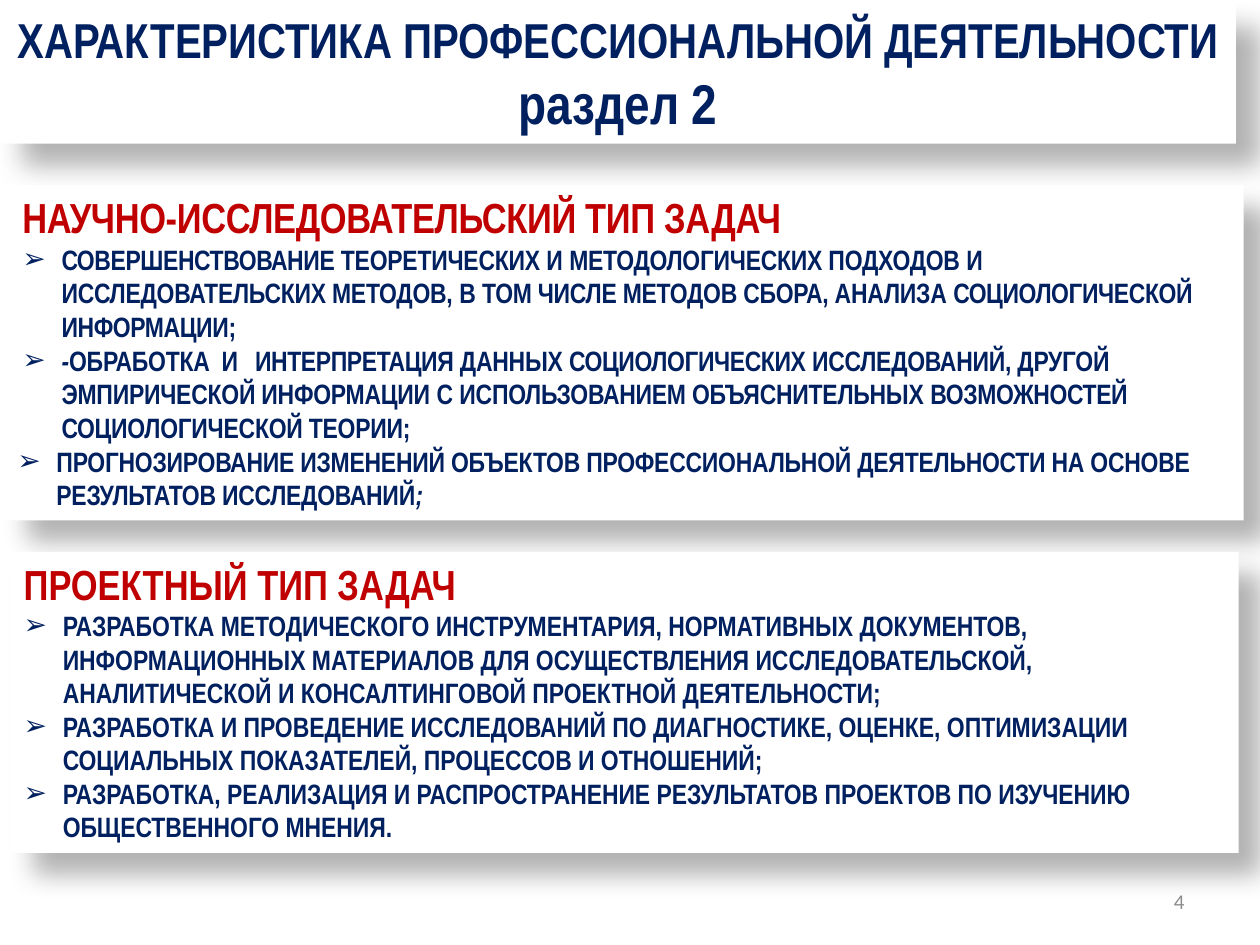
from dataclasses import dataclass

from lxml import etree
from pptx import Presentation
from pptx.dml.color import RGBColor
from pptx.enum.shapes import MSO_SHAPE
from pptx.enum.text import MSO_ANCHOR, MSO_AUTO_SIZE, PP_ALIGN
from pptx.oxml.ns import qn
from pptx.util import Inches, Pt

RECTANGLE = MSO_SHAPE.RECTANGLE
TOP, MIDDLE = MSO_ANCHOR.TOP, MSO_ANCHOR.MIDDLE
GROW = MSO_AUTO_SIZE.SHAPE_TO_FIT_TEXT
LEFT, CENTER, RIGHT = PP_ALIGN.LEFT, PP_ALIGN.CENTER, PP_ALIGN.RIGHT

NARROW = "Arial Narrow"
NAVY, RED, WHITE, BLACK, GRAY = "002060", "C00000", "FFFFFF", "000000", "8C8C8C"
BULLET = "➢"
BULLET_HANG = 0.31


@dataclass
class Run:
    text: str
    spacing: float = 0  # letter spacing in points
    italic: bool = False


@dataclass
class Line:
    runs: list[Run]
    size: int = 16
    color: str = NAVY
    align: PP_ALIGN = LEFT
    margin: float = 0
    before: float = 0
    bullet: bool = False
    font: str = NARROW
    bold: bool = True


@dataclass
class Panel:
    left: float
    top: float
    width: float
    height: float
    lines: list[Line]


def rgb(color: str) -> RGBColor:
    return RGBColor.from_string(color)


def heading(text: str, spacing: float = 0, **layout) -> Line:
    return Line([Run(text, spacing)], size=24, color=RED, **layout)


def item(*runs: Run, margin: float = BULLET_HANG, before: float = 0) -> Line:
    return Line(list(runs), margin=margin, before=before, bullet=True)


def add_shadow(shape) -> None:
    """Soft black shadow to the lower right."""
    shape.shadow.inherit = False
    effects = shape._element.spPr.find(qn("a:effectLst"))
    shadow = etree.SubElement(
        effects, qn("a:outerShdw"), blurRad=str(Pt(15)), dist=str(Pt(18)),
        dir=str(45 * 60000), algn="tl", rotWithShape="0")
    color = etree.SubElement(shadow, qn("a:srgbClr"), val=BLACK)
    etree.SubElement(color, qn("a:alpha"), val="30000")


def set_indent(paragraph, line: Line) -> None:
    properties = paragraph._p.get_or_add_pPr()
    properties.set("marL", str(Inches(line.margin)))
    if line.bullet:
        properties.set("indent", str(Inches(-BULLET_HANG)))
        etree.SubElement(properties, qn("a:buFont"), typeface="Arial")
        etree.SubElement(properties, qn("a:buChar"), char=BULLET)


def write_lines(text_frame, lines: list[Line]) -> None:
    for index, line in enumerate(lines):
        paragraph = text_frame.add_paragraph() if index else text_frame.paragraphs[0]
        paragraph.alignment = line.align
        paragraph.space_before = Pt(line.before)
        set_indent(paragraph, line)
        for part in line.runs:
            run = paragraph.add_run()
            run.text = part.text
            formats = {"name": line.font, "size": Pt(line.size),
                       "bold": line.bold, "italic": part.italic}
            for name, value in formats.items():
                setattr(run.font, name, value)
            run.font.color.rgb = rgb(line.color)
            if part.spacing:
                run._r.get_or_add_rPr().set("spc", str(round(part.spacing * 100)))


def add_panel(slide, panel: Panel) -> None:
    shape = slide.shapes.add_shape(
        RECTANGLE, Inches(panel.left), Inches(panel.top),
        Inches(panel.width), Inches(panel.height))
    shape.fill.solid()
    shape.fill.fore_color.rgb = rgb(WHITE)
    shape.line.fill.background()
    add_shadow(shape)
    formats = {"word_wrap": True, "vertical_anchor": TOP, "auto_size": GROW}
    for name, value in formats.items():
        setattr(shape.text_frame, name, value)
    write_lines(shape.text_frame, panel.lines)


def add_page_number(slide, number: str) -> None:
    box = slide.shapes.add_textbox(Inches(7.17), Inches(6.95), Inches(2.33), Inches(0.4))
    box.text_frame.word_wrap = True
    box.text_frame.vertical_anchor = MIDDLE
    write_lines(box.text_frame, [Line([Run(number)], size=12, color=GRAY, align=RIGHT,
                                      font="Calibri", bold=False)])


TITLE = Panel(0, 0.03, 9.81, 1.11, [
    Line([Run("ХАРАКТЕРИСТИКА ПРОФЕССИОНАЛЬНОЙ ДЕЯТЕЛЬНОСТИ ")], size=28, align=CENTER),
    Line([Run("раздел 2")], size=32, align=CENTER),
])

RESEARCH = Panel(0.04, 1.47, 9.83, 2.66, [
    heading("НАУЧНО-ИССЛЕДОВАТЕЛЬСКИЙ ТИП ЗАДАЧ", -0.2, margin=0.04, before=0.3),
    item(
        Run("СОВЕРШЕНСТВОВАНИЕ ", -0.2),
        Run("ТЕОРЕТИЧЕСКИХ ", -0.1),
        Run("И "),
        Run("МЕТОДОЛОГИЧЕСКИХ ПОДХОДОВ ", -0.1),
        Run("И "),
        Run("ИССЛЕДОВАТЕЛЬСКИХ МЕТОДОВ, ", -0.1),
        Run("В "),
        Run("ТОМ ЧИСЛЕ МЕТОДОВ СБОРА, АНАЛИЗА ", -0.1),
        Run("СОЦИОЛОГИЧЕСКОЙ ИНФОРМАЦИИ;", -0.2),
        margin=0.35, before=0.3),
    item(
        Run("-", -0.2, italic=True),
        Run("ОБРАБОТКА", -0.1),
        Run(" И ", 3),
        Run("ИНТЕРПРЕТАЦИЯ ", -0.2),
        Run("ДАННЫХ ", -0.1),
        Run("СОЦИОЛОГИЧЕСКИХ ", -0.2),
        Run("ИССЛЕДОВАНИЙ, ДРУГОЙ ЭМПИРИЧЕСКОЙ ИНФОРМАЦИИ ", -0.1),
        Run("С "),
        Run("ИСПОЛЬЗОВАНИЕМ ОБЪЯСНИТЕЛЬНЫХ ", -0.1),
        Run("ВОЗМОЖНОСТЕЙ ", -0.2),
        Run("СОЦИОЛОГИЧЕСКОЙ ТЕОРИИ;", -0.1),
        margin=0.35, before=0.2),
    item(
        Run("ПРОГНОЗИРОВАНИЕ ИЗМЕНЕНИЙ ОБЪЕКТОВ ПРОФЕССИОНАЛЬНОЙ ДЕЯТЕЛЬНОСТИ "
            "НА ОСНОВЕ РЕЗУЛЬТАТОВ ИССЛЕДОВАНИЙ", -0.1),
        Run(";", -0.1, italic=True)),
])

PROJECT = Panel(0.09, 4.38, 9.74, 2.39, [
    heading("ПРОЕКТНЫЙ ТИП ЗАДАЧ"),
    item(Run("РАЗРАБОТКА МЕТОДИЧЕСКОГО ИНСТРУМЕНТАРИЯ, НОРМАТИВНЫХ ДОКУМЕНТОВ, "
             "ИНФОРМАЦИОННЫХ МАТЕРИАЛОВ ДЛЯ ОСУЩЕСТВЛЕНИЯ ИССЛЕДОВАТЕЛЬСКОЙ, "
             "АНАЛИТИЧЕСКОЙ И КОНСАЛТИНГОВОЙ ПРОЕКТНОЙ ДЕЯТЕЛЬНОСТИ;")),
    item(Run("РАЗРАБОТКА И ПРОВЕДЕНИЕ ИССЛЕДОВАНИЙ ПО ДИАГНОСТИКЕ, ОЦЕНКЕ, "
             "ОПТИМИЗАЦИИ СОЦИАЛЬНЫХ ПОКАЗАТЕЛЕЙ, ПРОЦЕССОВ И ОТНОШЕНИЙ;")),
    item(Run("РАЗРАБОТКА, РЕАЛИЗАЦИЯ И РАСПРОСТРАНЕНИЕ РЕЗУЛЬТАТОВ ПРОЕКТОВ "
             "ПО ИЗУЧЕНИЮ ОБЩЕСТВЕННОГО МНЕНИЯ.")),
])


def main() -> None:
    presentation = Presentation()
    presentation.slide_width = Inches(10)
    presentation.slide_height = Inches(7.5)
    slide = presentation.slides.add_slide(presentation.slide_layouts[6])

    # Page number lies behind the panels
    add_page_number(slide, "4")

    # Title and the two task types
    for panel in (TITLE, RESEARCH, PROJECT):
        add_panel(slide, panel)

    presentation.save("out.pptx")


if __name__ == "__main__":
    main()
